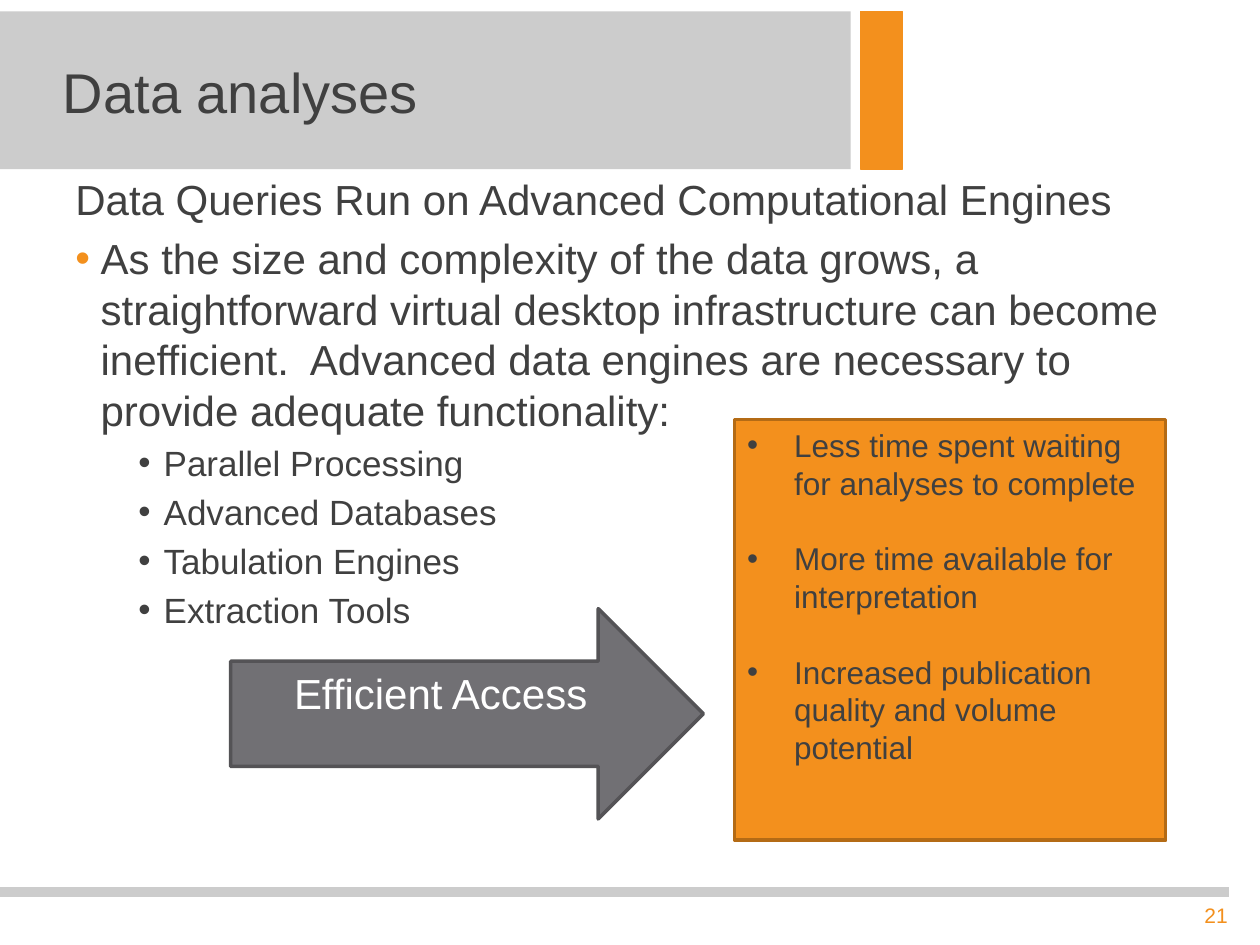
from lxml.etree import SubElement
from pptx import Presentation
from pptx.dml.color import RGBColor
from pptx.enum.shapes import MSO_CONNECTOR, MSO_SHAPE
from pptx.enum.text import MSO_ANCHOR, PP_ALIGN
from pptx.oxml.ns import qn
from pptx.util import Cm, Pt

COLORS = {
    "orange": "F3901D",
    "dark orange": "B46B15",
    "light gray": "CCCCCC",
    "gray": "717074",
    "dark gray": "545356",
    "text": "404040",
    "white": "FFFFFF",
}
FONT = "Arial"
LINE_FACTOR = 1.2

TOPIC = "Data Queries Run on Advanced Computational Engines"
REASON = (
    "As the size and complexity of the data grows, a straightforward virtual "
    "desktop infrastructure can become inefficient.  Advanced data engines are "
    "necessary to provide adequate functionality:"
)
ENGINES = ["Parallel Processing", "Advanced Databases", "Tabulation Engines", "Extraction Tools"]
BENEFITS = [
    "Less time spent waiting for analyses to complete",
    "More time available for interpretation",
    "Increased publication quality and volume potential",
]


def color(name):
    return RGBColor.from_string(COLORS[name])


def set_bullet(paragraph, margin, hanging, bullet_color=None):
    properties = paragraph._p.get_or_add_pPr()
    properties.set("marL", str(Cm(margin)))
    properties.set("indent", str(-Cm(hanging)))
    if bullet_color:
        fill = SubElement(SubElement(properties, qn("a:buClr")), qn("a:srgbClr"))
        fill.set("val", COLORS[bullet_color])
    SubElement(properties, qn("a:buFont")).set("typeface", FONT)
    SubElement(properties, qn("a:buChar")).set("char", "•")


def write_paragraph(frame, text, size, text_color="text", bullet=None, **formats):
    """Fill the first paragraph if it is empty, otherwise append one."""
    paragraph = frame.paragraphs[0]
    if paragraph.runs:
        paragraph = frame.add_paragraph()
    formats = {"line_spacing": Pt(size * LINE_FACTOR), **formats}
    for name, value in formats.items():
        setattr(paragraph, name, value)
    if bullet:
        set_bullet(paragraph, *bullet)
    run = paragraph.add_run()
    run.text = text
    for name, value in {"name": FONT, "size": Pt(size)}.items():
        setattr(run.font, name, value)
    run.font.color.rgb = color(text_color)


def add_block(slide, kind, position, fill, line=None, line_width=0.75):
    shape = slide.shapes.add_shape(kind, *map(Cm, position))
    shape.shadow.inherit = False
    shape.fill.solid()
    shape.fill.fore_color.rgb = color(fill)
    if line:
        shape.line.color.rgb = color(line)
        shape.line.width = Pt(line_width)
    else:
        shape.line.fill.background()
    frame = shape.text_frame
    frame.word_wrap = True
    frame.vertical_anchor = MSO_ANCHOR.TOP
    frame.paragraphs[0].alignment = PP_ALIGN.LEFT
    return shape


def add_text(slide, position):
    frame = slide.shapes.add_textbox(*map(Cm, position)).text_frame
    frame.word_wrap = True
    return frame


def add_footer(slide):
    rule = slide.shapes.add_connector(
        MSO_CONNECTOR.STRAIGHT, Cm(0), Cm(17.98), Cm(24.77), Cm(17.98)
    )
    rule.line.color.rgb = color("light gray")
    rule.line.width = Pt(6)
    SubElement(rule._element.spPr, qn("a:effectLst"))
    number = add_text(slide, (20.12, 18.06, 4.88, 0.76))
    write_paragraph(number, "21", 12, "orange", alignment=PP_ALIGN.RIGHT)


def add_title(slide):
    add_block(slide, MSO_SHAPE.RECTANGLE, (17.35, 0.23, 0.84, 3.18), "orange", "orange")
    banner = add_block(slide, MSO_SHAPE.RECTANGLE, (0, 0.23, 17.15, 3.18), "light gray")
    frame = banner.text_frame
    settings = {
        "vertical_anchor": MSO_ANCHOR.MIDDLE,
        "margin_left": Cm(1.27),
        "margin_top": Cm(0.25),
    }
    for name, value in settings.items():
        setattr(frame, name, value)
    write_paragraph(frame, "Data analyses", 32, line_spacing=Pt(36))


def add_access_arrow(slide):
    arrow = add_block(
        slide, MSO_SHAPE.RIGHT_ARROW, (4.65, 12.27, 9.53, 4.24), "gray", "dark gray", 2
    )
    write_paragraph(arrow.text_frame, "Efficient Access", 24, "white", alignment=PP_ALIGN.CENTER)


def add_benefits(slide):
    box = add_block(
        slide, MSO_SHAPE.RECTANGLE, (14.81, 8.46, 8.69, 8.48), "orange", "dark orange", 2
    )
    for index, benefit in enumerate(BENEFITS):
        write_paragraph(
            box.text_frame,
            benefit,
            18,
            bullet=(0.95, 0.95),
            alignment=PP_ALIGN.LEFT,
            space_before=Pt(18 * LINE_FACTOR if index else 0),
        )


def add_body(slide):
    frame = add_text(slide, (1.27, 3.38, 22.86, 13.13))
    write_paragraph(frame, TOPIC, 24)
    write_paragraph(frame, REASON, 24, bullet=(0.51, 0.51, "orange"), space_before=Pt(5))
    for engine in ENGINES:
        write_paragraph(frame, engine, 20, bullet=(1.78, 0.51), level=1, space_before=Pt(4))


def main():
    presentation = Presentation()
    presentation.slide_width = Cm(25.4)
    presentation.slide_height = Cm(19.05)
    slide = presentation.slides.add_slide(presentation.slide_layouts[6])
    add_footer(slide)
    add_title(slide)
    add_access_arrow(slide)
    add_benefits(slide)
    add_body(slide)
    presentation.save("out.pptx")


if __name__ == "__main__":
    main()
